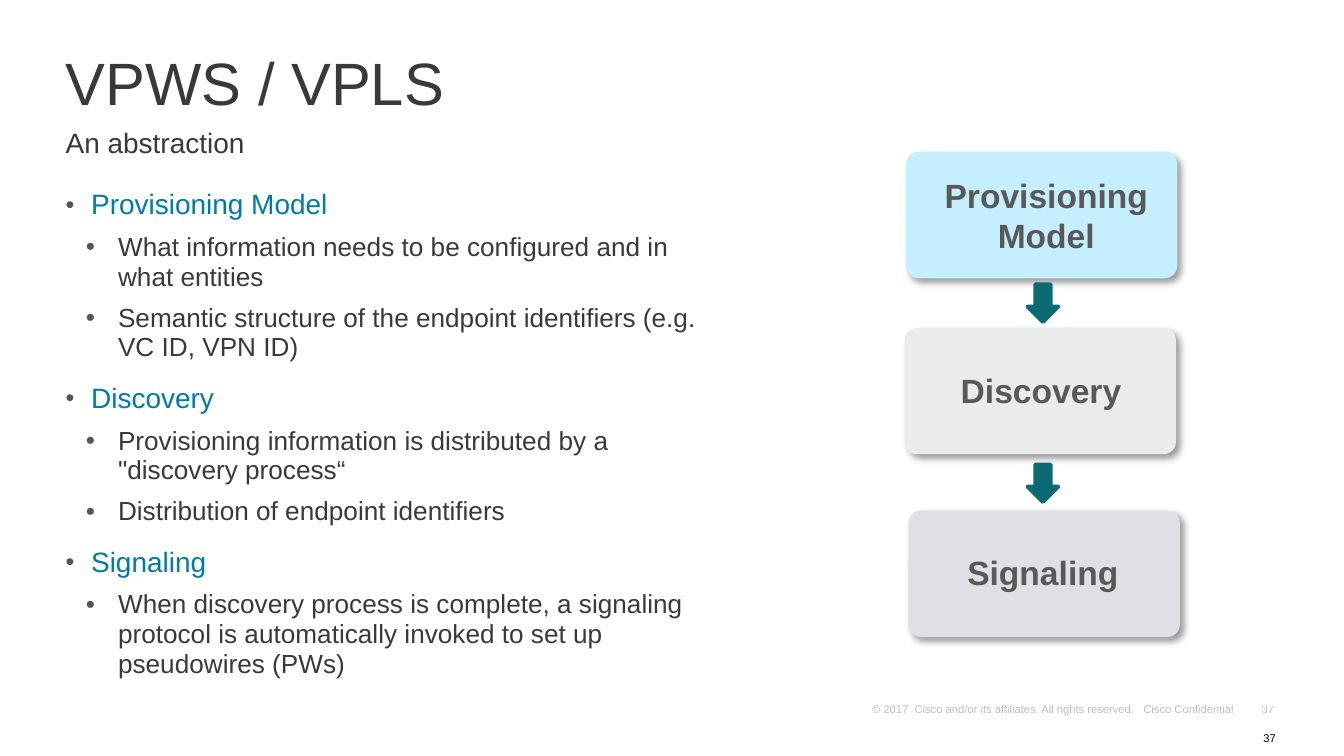
from dataclasses import dataclass

from lxml import etree
from pptx import Presentation
from pptx.dml.color import RGBColor
from pptx.enum import shapes, text
from pptx.oxml import ns
from pptx.util import Pt

FONT = "Arial"
DARK, BLUE, GREY, TEAL, BLACK = "39393B", "007AA6", "595959", "0B6B75", "000000"
LEFT, RIGHT, CENTER = text.PP_ALIGN.LEFT, text.PP_ALIGN.RIGHT, text.PP_ALIGN.CENTER
TOP, MIDDLE, BOTTOM = (text.MSO_ANCHOR.TOP, text.MSO_ANCHOR.MIDDLE,
                       text.MSO_ANCHOR.BOTTOM)
CARD_SIZE = (145.4, 67.7)
ARROW_LEFT, ARROW_SIZE = 548.6, (20.2, 16.6)
ARROW_TOPS = (154.1, 250.6)


@dataclass
class Label:
    words: str
    area: tuple[float, float, float, float]
    size: float
    color: str
    align: text.PP_ALIGN = LEFT
    anchor: text.MSO_ANCHOR = TOP
    insets: tuple[float, float] = (7.2, 3.6)
    wrap: bool = True
    spacing: float = 1.0
    bold: bool = False
    alpha: int = 100


@dataclass
class Card:
    corner: tuple[float, float]
    fill: str
    label: Label


@dataclass
class Level:
    indent: float
    hanging: float
    size: float
    color: str
    before: float
    bullet_percent: int


LEVELS = (Level(13.7, 13.7, 15, BLUE, 10.8, 90), Level(28.1, 17.3, 14, DARK, 6, 100))

TOPICS = {
    "Provisioning Model": (
        "What information needs to be configured and in what entities",
        "Semantic structure of the endpoint identifiers (e.g. VC ID, VPN ID)"),
    "Discovery": (
        'Provisioning information is distributed by a "discovery process“',
        "Distribution of endpoint identifiers"),
    "Signaling": (
        "When discovery process is complete, a signaling protocol is "
        "automatically invoked to set up pseudowires (PWs)",),
}

LABELS = (
    Label("37", (670.3, 373.7, 17.3, 12.2), 6, BLACK, RIGHT, BOTTOM, (5, 2.2),
          wrap=False, alpha=25),
    Label("© 2017  Cisco and/or its affiliates. All rights reserved.   "
          "Cisco Confidential", (462.2, 373.7, 209.5, 12.2), 6, BLACK,
          anchor=BOTTOM, insets=(5, 2.2), alpha=25),
    Label("37", (662.4, 384.5, 28.1, 21.6), 6, BLACK, RIGHT, MIDDLE),
    Label("VPWS / VPLS", (28.1, 30.2, 670.3, 34.6), 32, DARK, anchor=MIDDLE,
          spacing=0.8),
    Label("An abstraction", (28.1, 64.8, 670.3, 30.2), 15, DARK, spacing=0.95),
)

CARDS = (
    Card((484.6, 175.7), "EAEBED",
         Label("Discovery", (507.6, 194.4, 103.7, 28.8), 18, GREY,
               wrap=False, bold=True)),
    Card((486.7, 273.6), "DFE0E4",
         Label("Signaling", (510.5, 292.3, 96.5, 28.8), 18, GREY, CENTER,
               wrap=False, bold=True)),
    Card((485.3, 81.4), "C5EEFE",
         Label("Provisioning Model", (497.5, 90, 126, 51.1), 18, GREY, CENTER,
               bold=True)),
)


def rgb(value: str) -> RGBColor:
    return RGBColor.from_string(value)


def points(*lengths: float) -> list[Pt]:
    return [Pt(length) for length in lengths]


def add_child(parent, tag: str, **attributes):
    child = etree.SubElement(parent, ns.qn(tag))
    for name, value in attributes.items():
        child.set(name, str(value))
    return child


def write_label(box, label: Label) -> None:
    frame = box.text_frame
    frame.text = label.words
    frame.word_wrap = label.wrap
    frame.vertical_anchor = label.anchor
    frame.margin_left = frame.margin_right = Pt(label.insets[0])
    frame.margin_top = frame.margin_bottom = Pt(label.insets[1])
    para = frame.paragraphs[0]
    para.alignment = label.align
    para.line_spacing = label.spacing
    span = para.runs[0]
    span.font.name, span.font.size = FONT, Pt(label.size)
    span.font.bold = label.bold
    span.font.color.rgb = rgb(label.color)
    if label.alpha < 100:
        tint = span.font._element.find(".//" + ns.qn("a:srgbClr"))
        add_child(tint, "a:alpha", val=label.alpha * 1000)


def add_filled(parent, kind, area, fill: str):
    shape = parent.add_shape(kind, *points(*area))
    shape.shadow.inherit = False
    shape.fill.solid()
    shape.fill.fore_color.rgb = rgb(fill)
    shape.line.fill.background()
    return shape


def add_drop_shadow(shape) -> None:
    effects = shape._element.spPr.find(ns.qn("a:effectLst"))
    shadow = add_child(effects, "a:outerShdw", blurRad=Pt(4), dist=Pt(3),
                       dir=45 * 60000, algn="tl", rotWithShape=0)
    tint = add_child(shadow, "a:srgbClr", val=BLACK)
    add_child(tint, "a:alpha", val=40000)


def add_card(page, card: Card) -> None:
    group = page.shapes.add_group_shape()
    panel = add_filled(group.shapes, shapes.MSO_SHAPE.ROUNDED_RECTANGLE,
                       card.corner + CARD_SIZE, card.fill)
    panel.adjustments[0] = 0.1
    add_drop_shadow(panel)
    plate = add_filled(group.shapes, shapes.MSO_SHAPE.RECTANGLE,
                       card.label.area, card.fill)
    write_label(plate, card.label)


def add_arrow(page, top: float) -> None:
    arrow = add_filled(page.shapes, shapes.MSO_SHAPE.RIGHT_ARROW,
                       (ARROW_LEFT, top) + ARROW_SIZE, TEAL)
    arrow.rotation = 90
    arrow.line.color.rgb = rgb(TEAL)
    arrow.line.width = Pt(2)


def add_topics(page) -> None:
    box = page.shapes.add_textbox(*points(28.1, 97.9, 362.9, 244.1))
    frame = box.text_frame
    frame.word_wrap = True
    lines = [(depth, words) for topic, details in TOPICS.items()
             for depth, words in [(0, topic)] + [(1, detail) for detail in details]]
    for index, (depth, words) in enumerate(lines):
        para = frame.add_paragraph() if index else frame.paragraphs[0]
        level = LEVELS[depth]
        para.text = words
        para.level = depth
        para.line_spacing = 0.95
        para.space_before = Pt(level.before if index else 0)
        props = para._p.get_or_add_pPr()
        props.set("marL", str(Pt(level.indent)))
        props.set("indent", str(-Pt(level.hanging)))
        add_child(add_child(props, "a:buClr"), "a:srgbClr", val="555558")
        add_child(props, "a:buSzPct", val=level.bullet_percent * 1000)
        add_child(props, "a:buFont", typeface=FONT)
        add_child(props, "a:buChar", char="•")
        span = para.runs[0]
        span.font.name, span.font.size = FONT, Pt(level.size)
        span.font.color.rgb = rgb(level.color)


def main() -> None:
    deck = Presentation()
    deck.slide_width, deck.slide_height = points(720, 405)
    page = deck.slides.add_slide(deck.slide_layouts[6])
    for label in LABELS:
        write_label(page.shapes.add_textbox(*points(*label.area)), label)
    add_topics(page)
    for card in CARDS:
        add_card(page, card)
    for top in ARROW_TOPS:
        add_arrow(page, top)
    deck.save("out.pptx")


if __name__ == "__main__":
    main()
